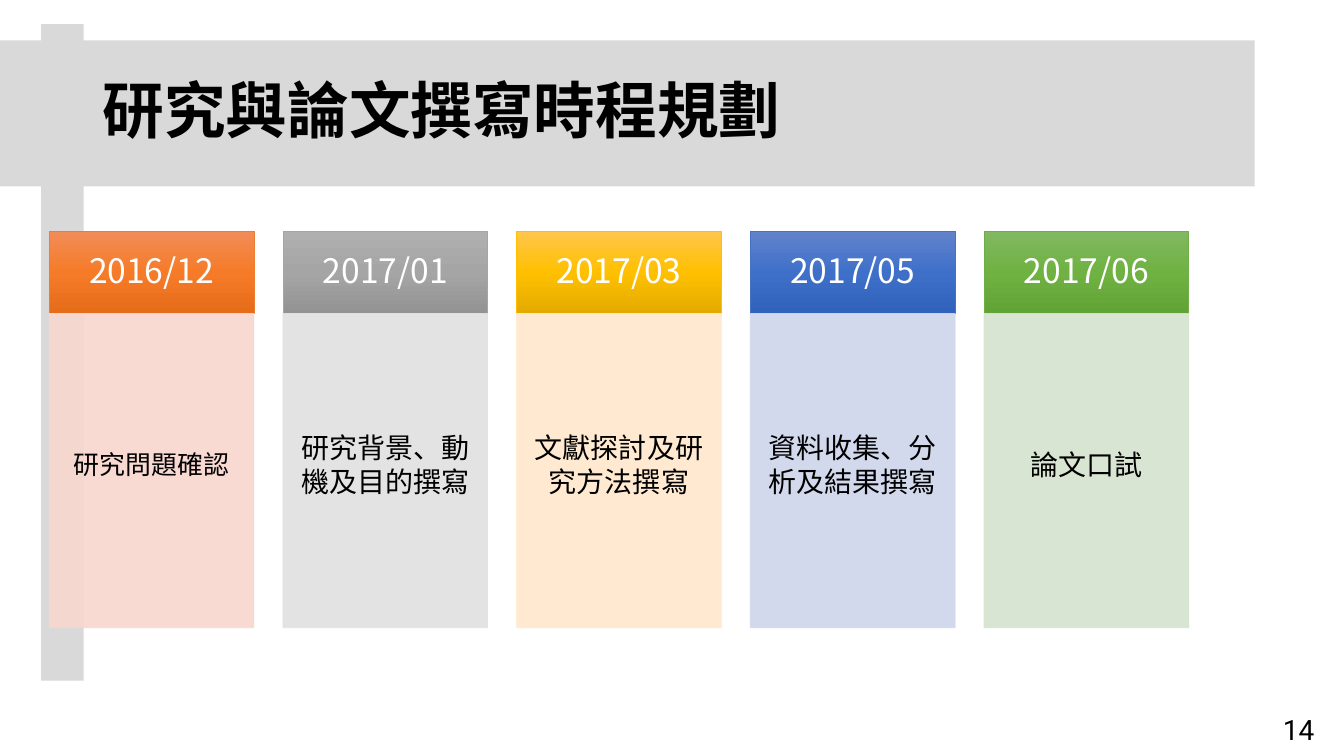
from copy import deepcopy

from lxml import etree
from pptx import Presentation
from pptx.dml.color import RGBColor
from pptx.enum import shapes, text
from pptx.oxml import ns
from pptx.util import Cm, Pt

BLACK = RGBColor(0x00, 0x00, 0x00)
WHITE = RGBColor(0xFF, 0xFF, 0xFF)
BAND_GREY = RGBColor(0xD9, 0xD9, 0xD9)
ORANGE = [RGBColor.from_string(c) for c in ("F18C57", "F67B28", "E56C19", "ED7D31", "F8D7CE")]
GREY = [RGBColor.from_string(c) for c in ("AFAFAF", "A5A5A5", "939393", "A5A5A5", "E1E1E1")]
GOLD = [RGBColor.from_string(c) for c in ("FFC64B", "FFC000", "E3AB00", "FFC000", "FFE8CC")]
BLUE = [RGBColor.from_string(c) for c in ("6183CB", "3E70CA", "3062BB", "4472C4", "CFD5EA")]
GREEN = [RGBColor.from_string(c) for c in ("81B861", "6FB242", "62A336", "70AD47", "D5E3CF")]

CJK_FONT = "Noto Sans CJK TC"
NUMBER_FONT = "Roboto"

MILESTONES = [
    ("2016/12", "研究問題確認", 18.5, ORANGE),
    ("2017/01", "研究背景、動機及目的撰寫", 20, GREY),
    ("2017/03", "文獻探討及研究方法撰寫", 20, GOLD),
    ("2017/05", "資料收集、分析及結果撰寫", 20, BLUE),
    ("2017/06", "論文口試", 20, GREEN),
]
FIRST_LEFT, PITCH, COLUMN_WIDTH = 1.24, 5.89, 5.16
DATE_TOP, DATE_HEIGHT = 5.84, 2.06
TASK_TOP, TASK_HEIGHT = DATE_TOP + DATE_HEIGHT, 7.92


def write(holder, words, size, color=BLACK, font=CJK_FONT, bold=False,
          align=text.PP_ALIGN.CENTER, spacing=1.0):
    frame = holder.text_frame
    frame.word_wrap = True
    frame.vertical_anchor = text.MSO_ANCHOR.MIDDLE
    frame.text = words
    paragraph = frame.paragraphs[0]
    paragraph.alignment = align
    paragraph.line_spacing = spacing
    run = paragraph.runs[0]
    run.font.size = Pt(size)
    run.font.bold = bold
    run.font.color.rgb = color
    run.font.name = font
    east_asian = etree.SubElement(run.font._element, ns.qn("a:ea"))
    east_asian.set("typeface", font)


def add_label(slide, left, top, width, height, words, size, **style):
    label = slide.shapes.add_textbox(Cm(left), Cm(top), Cm(width), Cm(height))
    write(label, words, size, **style)


def add_block(slide, left, top, width, height):
    block = slide.shapes.add_shape(
        shapes.MSO_SHAPE.RECTANGLE, Cm(left), Cm(top), Cm(width), Cm(height))
    block.shadow.inherit = False
    return block


def add_band(slide, left, top, width, height):
    band = add_block(slide, left, top, width, height)
    band.fill.solid()
    band.fill.fore_color.rgb = BAND_GREY
    band.line.fill.background()


def outline(block, color):
    block.line.color.rgb = color
    block.line.width = Pt(0.5)


def shade(block, colors):
    block.fill.gradient()
    block.fill.gradient_angle = 270
    stop_list = block._element.spPr.find(".//" + ns.qn("a:gsLst"))
    stop_list.append(deepcopy(stop_list[-1]))
    for stop, position, color in zip(block.fill.gradient_stops, (0, 0.5, 1), colors):
        stop.position = position
        stop.color.rgb = color


def add_date(slide, left, words, colors, border):
    date = add_block(slide, left, DATE_TOP, COLUMN_WIDTH, DATE_HEIGHT)
    shade(date, colors)
    outline(date, border)
    write(date, words, 24, color=WHITE, spacing=0.9)


def add_task(slide, left, words, size, tint):
    task = add_block(slide, left, TASK_TOP, COLUMN_WIDTH, TASK_HEIGHT)
    task.fill.solid()
    task.fill.fore_color.rgb = tint
    outline(task, tint)
    for color in task._element.spPr.iter(ns.qn("a:srgbClr")):
        etree.SubElement(color, ns.qn("a:alpha")).set("val", "90000")
    write(task, words, size)
    task.text_frame.margin_bottom = Cm(0.43)


def main():
    deck = Presentation()
    deck.slide_width, deck.slide_height = Cm(33.87), Cm(19.05)
    slide = deck.slides.add_slide(deck.slide_layouts[6])

    add_band(slide, 0, 1.02, 31.62, 3.68)
    add_label(slide, 31.8, 17.81, 1.85, 1.12, "14", 20, font=NUMBER_FONT)
    add_band(slide, 1.04, 0.61, 1.07, 16.54)
    add_label(slide, 2.34, 1.02, 27.66, 3.68, "研究與論文撰寫時程規劃", 44,
              bold=True, align=text.PP_ALIGN.LEFT, spacing=0.9)

    for column, (date, task, size, palette) in enumerate(MILESTONES):
        left = FIRST_LEFT + column * PITCH
        *gradient, border, tint = palette
        add_date(slide, left, date, gradient, border)
        add_task(slide, left, task, size, tint)

    deck.save("out.pptx")


if __name__ == "__main__":
    main()
